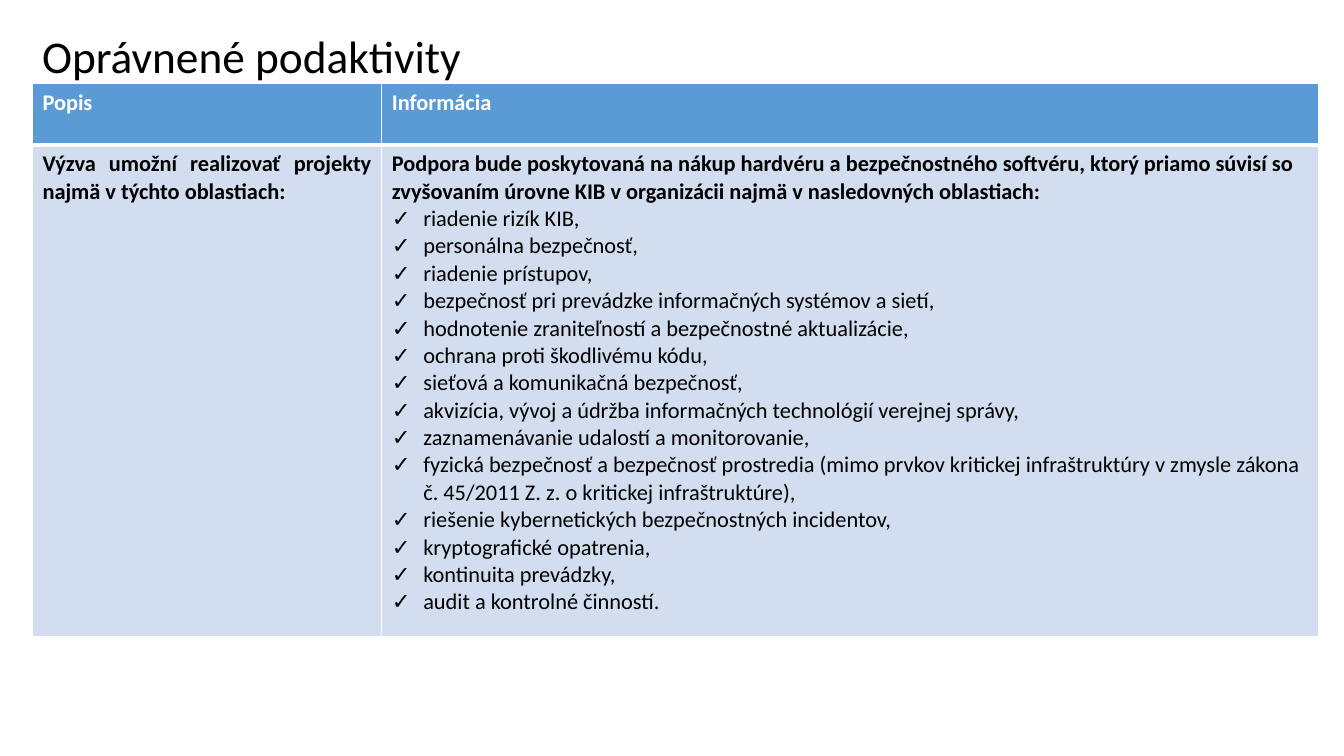
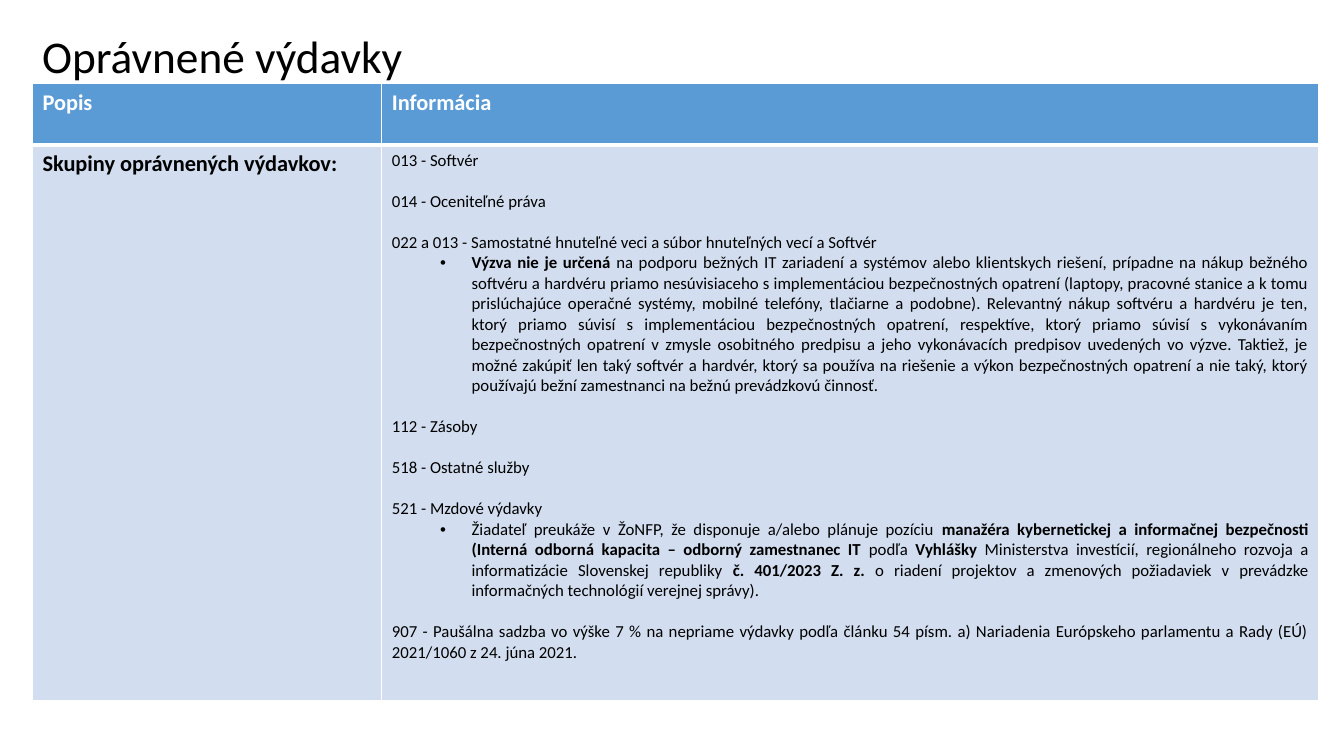
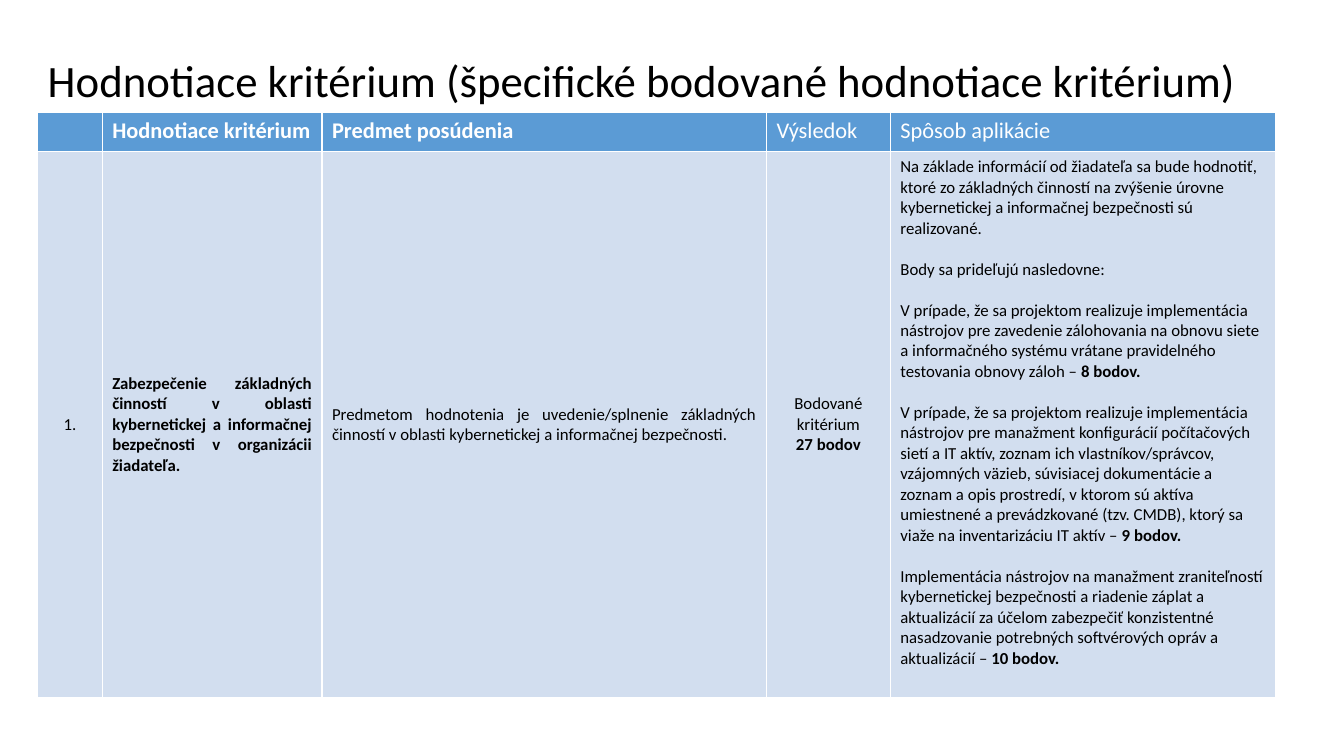
"""Build three slides on eligible activities, expenses and scoring criteria."""
from dataclasses import dataclass

from lxml import etree
from pptx import Presentation
from pptx import util as u
from pptx.dml.color import RGBColor
from pptx.enum import text
from pptx.oxml.ns import qn

Pt = u.Pt
ALIGN = text.PP_ALIGN
ANCHOR = text.MSO_ANCHOR


@dataclass(frozen=True)
class Theme:
    """Hold the colours and type sizes of the presentation."""
    font: str = "Calibri"
    header_fill: str = "5B9BD5"
    body_fill: str = "D2DEEF"
    white: str = "FFFFFF"
    black: str = "000000"
    large_title: float = 32.4
    title: float = 32
    normal: float = 16
    small: float = 12
    small_line: float = 14.65


@dataclass(frozen=True)
class Line:
    """Describe one paragraph, with bold parts between double asterisks."""
    content: str
    align: ALIGN = ALIGN.LEFT
    gap: float = 0
    bullet: str = ""
    indent: float = 0


@dataclass(frozen=True)
class Cell:
    """Describe the paragraphs of one table cell."""
    lines: tuple
    size: float
    anchor: ANCHOR = ANCHOR.TOP


THEME = Theme()
HANGING = 22.5


def format_run(run, size, color, bold=False):
    """Apply font, size, colour and weight to a run."""
    run.font.name = THEME.font
    run.font.size = Pt(size)
    run.font.bold = bold
    run.font.color.rgb = RGBColor.from_string(color)


def add_bullet(paragraph, mark, indent):
    """Give a paragraph a hanging bullet."""
    properties = paragraph._p.get_or_add_pPr()
    properties.set("marL", str(Pt(indent)))
    properties.set("indent", str(-Pt(HANGING)))
    etree.SubElement(properties, qn("a:buFont"), typeface="Arial")
    etree.SubElement(properties, qn("a:buChar"), char=mark)


def write_line(paragraph, line, size, color):
    """Write one line with its bold parts, gap and bullet."""
    paragraph.alignment = line.align
    paragraph.space_after = Pt(line.gap)
    if line.bullet:
        add_bullet(paragraph, line.bullet, line.indent)
    for index, part in enumerate(line.content.split("**")):
        if part:
            run = paragraph.add_run()
            run.text = part
            format_run(run, size, color, bold=index % 2 == 1)
    if not line.content:
        etree.SubElement(paragraph._p, qn("a:endParaRPr"), sz=str(int(size * 100)))


def set_borders(cell, top, bottom):
    """Draw white borders round a cell."""
    properties = cell._tc.get_or_add_tcPr()
    widths = {"a:lnL": 1, "a:lnR": 1, "a:lnT": top, "a:lnB": bottom}
    for index, (tag, width) in enumerate(widths.items()):
        border = etree.Element(qn(tag), w=str(Pt(width)))
        fill = etree.SubElement(border, qn("a:solidFill"))
        etree.SubElement(fill, qn("a:srgbClr"), val=THEME.white)
        properties.insert(index, border)


def fill_cell(cell, content, fill, color):
    """Fill a table cell with its colour and paragraphs."""
    cell.fill.solid()
    cell.fill.fore_color.rgb = RGBColor.from_string(fill)
    cell.vertical_anchor = content.anchor
    frame = cell.text_frame
    for index, line in enumerate(content.lines):
        paragraph = frame.add_paragraph() if index else frame.paragraphs[0]
        write_line(paragraph, line, content.size, color)


def add_title(slide, title, box, size, inset):
    """Add a slide title standing on the lower edge of its box."""
    shape = slide.shapes.add_textbox(*map(Pt, box))
    frame = shape.text_frame
    frame.word_wrap = True
    frame.vertical_anchor = ANCHOR.BOTTOM
    frame.margin_top = frame.margin_bottom = Pt(inset)
    frame.text = title
    paragraph = frame.paragraphs[0]
    paragraph.line_spacing = 0.9
    format_run(paragraph.runs[0], size, THEME.black)


def add_grid(slide, left, top, widths, heights, headers, cells, rule):
    """Add a table of one header row and one body row."""
    table = slide.shapes.add_table(
        2, len(widths), Pt(left), Pt(top), Pt(sum(widths)), Pt(sum(heights))).table
    table.horz_banding = False
    for row, height in zip(table.rows, heights):
        row.height = Pt(height)
    for index, width in enumerate(widths):
        table.columns[index].width = Pt(width)
        header, body = table.cell(0, index), table.cell(1, index)
        header_content = Cell((Line(headers[index]),), THEME.normal)
        fill_cell(header, header_content, THEME.header_fill, THEME.white)
        fill_cell(body, cells[index], THEME.body_fill, THEME.black)
        set_borders(header, 1, rule)
        set_borders(body, rule, 1)


def add_information_slide(presentation, title, height, label, information):
    """Add a slide with a description and an information column."""
    slide = presentation.slides.add_slide(presentation.slide_layouts[6])
    add_title(slide, title, (23, 23, 720, 36.7), THEME.large_title, 0)
    description = Cell((Line(label, ALIGN.JUSTIFY),), THEME.normal)
    add_grid(slide, 23.2, 59.8, (249.5, 669.5), (44, height),
             ("**Popis**", "**Informácia**"), (description, information), 3)


def add_activities(presentation):
    """Add the slide of eligible activities."""
    areas = (
        "riadenie rizík KIB,",
        "personálna bezpečnosť,",
        "riadenie prístupov,",
        "bezpečnosť pri prevádzke informačných systémov a sietí,",
        "hodnotenie zraniteľností a bezpečnostné aktualizácie,",
        "ochrana proti škodlivému kódu,",
        "sieťová a komunikačná bezpečnosť,",
        "akvizícia, vývoj a údržba informačných technológií verejnej správy,",
        "zaznamenávanie udalostí a monitorovanie,",
        "fyzická bezpečnosť a bezpečnosť prostredia (mimo prvkov kritickej "
        "infraštruktúry v zmysle zákona č. 45/2011 Z. z. o kritickej infraštruktúre),",
        "riešenie kybernetických bezpečnostných incidentov,",
        "kryptografické opatrenia,",
        "kontinuita prevádzky,",
        "audit a kontrolné činností.",
    )
    introduction = Line(
        "**Podpora bude poskytovaná na nákup hardvéru a bezpečnostného softvéru, "
        "ktorý priamo súvisí so zvyšovaním úrovne KIB v organizácii najmä "
        "v nasledovných oblastiach:**")
    bullets = tuple(Line(area, bullet="✓", indent=HANGING) for area in areas)
    add_information_slide(
        presentation, "Oprávnené podaktivity", 351,
        "**Výzva umožní realizovať projekty najmä v týchto oblastiach:**",
        Cell((introduction, *bullets), THEME.normal))


def add_expenses(presentation):
    """Add the slide of eligible expenses."""
    def group(content, gap=THEME.small_line):
        """Describe an expense group."""
        return Line(content, ALIGN.JUSTIFY, gap)

    def note(content):
        """Describe a bulleted note under an expense group."""
        return Line(content, ALIGN.JUSTIFY, THEME.small_line, "•", 57)

    lines = (
        group("013 - Softvér"),
        group("014 - Oceniteľné práva"),
        group("022 a 013 - Samostatné hnuteľné veci a súbor hnuteľných vecí a Softvér", 0),
        note("**Výzva nie je určená **na podporu bežných IT zariadení a systémov alebo "
             "klientskych riešení, prípadne na nákup bežného softvéru a hardvéru priamo "
             "nesúvisiaceho s implementáciou bezpečnostných opatrení (laptopy, pracovné "
             "stanice a k tomu prislúchajúce operačné systémy, mobilné telefóny, tlačiarne "
             "a podobne). Relevantný nákup softvéru a hardvéru je ten, ktorý priamo súvisí "
             "s implementáciou bezpečnostných opatrení, respektíve, ktorý priamo súvisí "
             "s vykonávaním bezpečnostných opatrení v zmysle osobitného predpisu a jeho "
             "vykonávacích predpisov uvedených vo výzve. Taktiež, je možné zakúpiť len taký "
             "softvér a hardvér, ktorý sa používa na riešenie a výkon bezpečnostných "
             "opatrení a nie taký, ktorý používajú bežní zamestnanci na bežnú prevádzkovú "
             "činnosť."),
        group("112 - Zásoby"),
        group("518 - Ostatné služby"),
        group("521 - Mzdové výdavky", 0),
        note("Žiadateľ preukáže v ŽoNFP, že disponuje a/alebo plánuje pozíciu **manažéra "
             "kybernetickej a informačnej bezpečnosti (Interná odborná kapacita – odborný "
             "zamestnanec IT **podľa **Vyhlášky** Ministerstva investícií, regionálneho "
             "rozvoja a informatizácie Slovenskej republiky **č. 401/2023 Z. z. **o riadení "
             "projektov a zmenových požiadaviek v prevádzke informačných technológií "
             "verejnej správy)."),
        group("907 - Paušálna sadzba vo výške 7 % na nepriame výdavky podľa článku 54 "
              "písm. a) Nariadenia Európskeho parlamentu a Rady (EÚ) 2021/1060 "
              "z 24. júna 2021.", 0),
    )
    add_information_slide(
        presentation, "Oprávnené výdavky", 396.5,
        "**Skupiny oprávnených výdavkov:**", Cell(lines, THEME.small))


def add_criterion(presentation):
    """Add the slide of the scored criterion."""
    scoring = (
        "Na základe informácií od žiadateľa sa bude hodnotiť, ktoré zo základných "
        "činností na zvýšenie úrovne kybernetickej a informačnej bezpečnosti sú "
        "realizované.",
        "Body sa prideľujú nasledovne:",
        "V prípade, že sa projektom realizuje implementácia nástrojov pre zavedenie "
        "zálohovania na obnovu siete a informačného systému vrátane pravidelného "
        "testovania obnovy záloh – **8 bodov.**",
        "V prípade, že sa projektom realizuje implementácia nástrojov pre manažment "
        "konfigurácií počítačových sietí a IT aktív, zoznam ich vlastníkov/správcov, "
        "vzájomných väzieb, súvisiacej dokumentácie a zoznam a opis prostredí, v ktorom "
        "sú aktíva umiestnené a prevádzkované (tzv. CMDB), ktorý sa viaže na "
        "inventarizáciu IT aktív – **9 bodov.**",
        "Implementácia nástrojov na manažment zraniteľností kybernetickej bezpečnosti "
        "a riadenie záplat a aktualizácií za účelom zabezpečiť konzistentné nasadzovanie "
        "potrebných softvérových opráv a aktualizácií – **10 bodov.**",
    )
    centred = (
        (Line("1.", ALIGN.CENTER),),
        (Line("**Zabezpečenie základných činností v oblasti kybernetickej a informačnej "
              "bezpečnosti v organizácii žiadateľa.**", ALIGN.JUSTIFY),),
        (Line("Predmetom hodnotenia je uvedenie/splnenie základných činností v oblasti "
              "kybernetickej a informačnej bezpečnosti.", ALIGN.JUSTIFY),),
        (Line("Bodované kritérium", ALIGN.CENTER), Line("**27 bodov**", ALIGN.CENTER)),
    )
    cells = [Cell(lines, THEME.small, ANCHOR.MIDDLE) for lines in centred]
    rules = tuple(Line(content, gap=THEME.small_line) for content in scoring[:-1])
    cells.append(Cell((*rules, Line(scoring[-1])), THEME.small))
    headers = ("", "**Hodnotiace kritérium**", "**Predmet posúdenia**",
               "Výsledok", "Spôsob aplikácie")
    slide = presentation.slides.add_slide(presentation.slide_layouts[6])
    add_title(slide, "Hodnotiace kritérium (špecifické bodované hodnotiace kritérium)",
              (27, 21, 885, 59), THEME.title, 3.6)
    add_grid(slide, 27, 80.3, (46, 157, 317.5, 88.5, 275.5), (28, 390),
             headers, cells, 1)


def main():
    """Build and save the presentation."""
    presentation = Presentation()
    presentation.slide_width = Pt(960)
    presentation.slide_height = Pt(540)
    add_activities(presentation)
    add_expenses(presentation)
    add_criterion(presentation)
    presentation.save("out.pptx")


if __name__ == "__main__":
    main()
